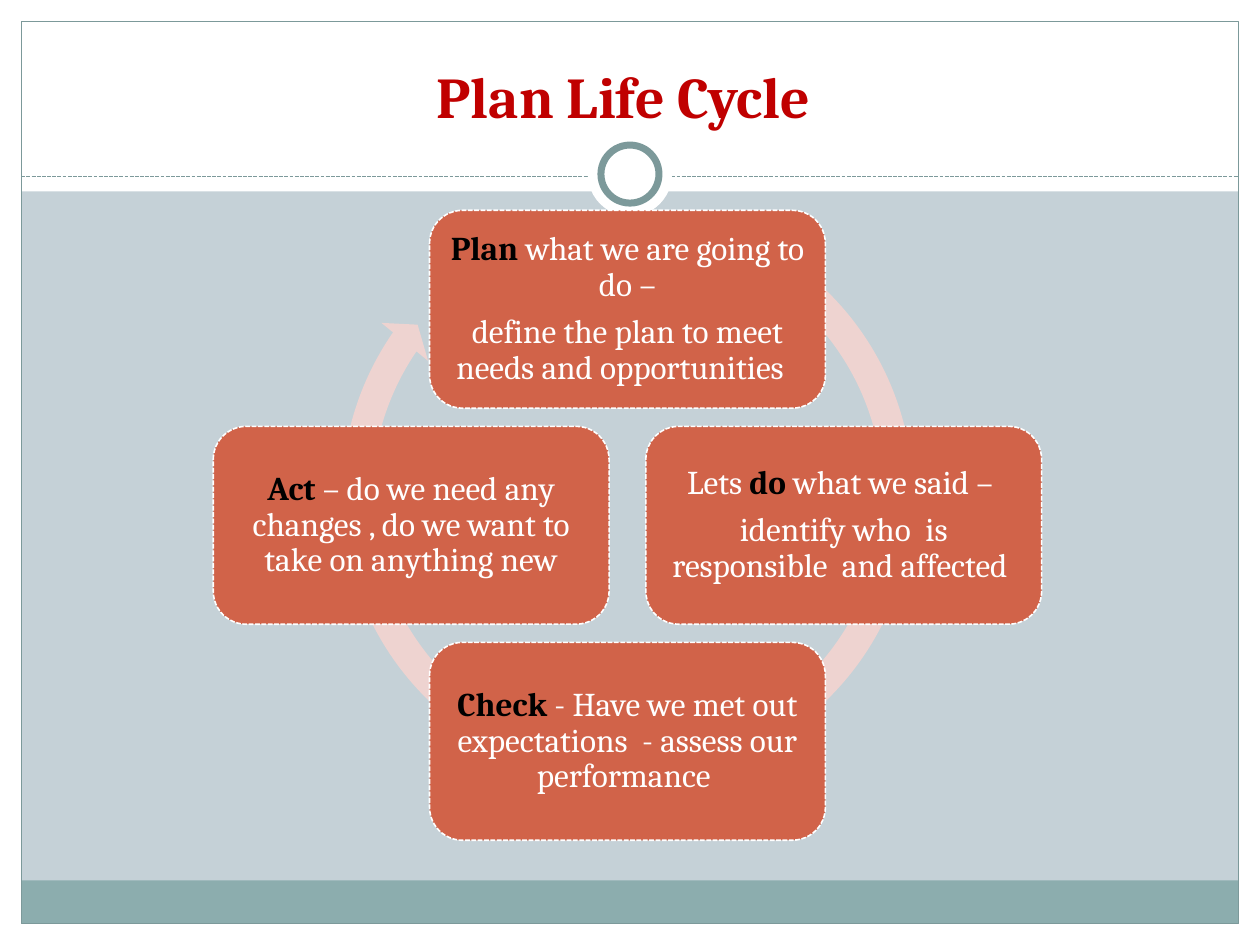
from dataclasses import dataclass

from lxml import etree
from pptx import Presentation
from pptx.dml.color import RGBColor
from pptx.enum.dml import MSO_LINE
from pptx.enum.shapes import MSO_CONNECTOR, MSO_SHAPE
from pptx.enum.text import MSO_ANCHOR, MSO_AUTO_SIZE, PP_ALIGN
from pptx.oxml.ns import qn
from pptx.util import Cm, Pt

RECT = MSO_SHAPE.RECTANGLE
ROUNDED = MSO_SHAPE.ROUNDED_RECTANGLE
OVAL = MSO_SHAPE.OVAL
CYCLE_ARROW = MSO_SHAPE.CIRCULAR_ARROW
STRAIGHT = MSO_CONNECTOR.STRAIGHT
DASH = MSO_LINE.SQUARE_DOT
CENTER = PP_ALIGN.CENTER
MIDDLE = MSO_ANCHOR.MIDDLE
BOTTOM = MSO_ANCHOR.BOTTOM
NO_FIT = MSO_AUTO_SIZE.NONE


@dataclass(frozen=True)
class Theme:
    font: str = "Cambria"
    title_size: float = 33
    card_size: float = 19
    backdrop: str = "C5D1D7"
    paper: str = "FFFFFF"
    band: str = "8CADAE"
    rule: str = "7C999A"
    title: str = "C00000"
    card: str = "D16349"
    arrow: str = "EED3D0"
    keyword: str = "000000"


THEME = Theme()
WIDTH, HEIGHT = 25.4, 19.05
MARGIN = 0.43
HEADER = 3.86

STEPS = [
    ((0, -1), [[("Plan", True), (" what we are going to do –", False)],
               [("define the plan to meet needs and opportunities  ", False)]]),
    ((1, 0), [[("Lets ", False), ("do", True), (" what we said – ", False)],
              [("identify who  is responsible  and affected ", False)]]),
    ((0, 1), [[("Check ", True),
               ("- Have we met out expectations  - assess our performance ", False)]]),
    ((-1, 0), [[("Act", True),
                (" – do we need any changes , do we want to take on anything new", False)]]),
]


def color(value):
    return RGBColor.from_string(value)


def style_line(line, value, width, dash=None):
    line.color.rgb = color(value)
    line.width = Pt(width)
    if dash:
        line.dash_style = dash


def add_block(slide, kind, box, fill=None, line=None):
    block = slide.shapes.add_shape(kind, *(Cm(length) for length in box))
    block.shadow.inherit = False
    if fill:
        block.fill.solid()
        block.fill.fore_color.rgb = color(fill)
    else:
        block.fill.background()
    if line:
        style_line(block.line, *line)
    else:
        block.line.fill.background()
    return block


def add_run(paragraph, text, size, value, bold):
    run = paragraph.add_run()
    run.text = text
    run.font.name = THEME.font
    run.font.size = Pt(size)
    run.font.bold = bold
    run.font.color.rgb = color(value)


def add_frame(slide, box):
    left, top, width, height = box
    inner_width, inner_height = width - 2 * MARGIN, height - 2 * MARGIN
    right, bottom = left + width - MARGIN, top + height - MARGIN
    margins = [
        (left, bottom, width, MARGIN),
        (left, top, width, HEADER),
        (left, top, MARGIN, height),
        (right, top, MARGIN, height),
    ]
    for margin in margins:
        add_block(slide, RECT, margin, THEME.paper)
    band_height = 0.87
    add_block(slide, RECT, (left + MARGIN, bottom - band_height, inner_width, band_height),
              THEME.band)
    add_block(slide, RECT, (left + MARGIN, top + MARGIN, inner_width, inner_height),
              line=(THEME.rule, 0.75))

    divider_y = Cm(top + 3.56)
    divider = slide.shapes.add_connector(STRAIGHT, Cm(left + MARGIN), divider_y,
                                         Cm(right), divider_y)
    style_line(divider.line, THEME.rule, 0.75, DASH)
    etree.SubElement(divider._element.spPr, qn("a:effectLst"))

    ring_x, ring_y = left + width / 2, top + 3.51
    for size, line in ((1.7, None), (1.17, (THEME.rule, 4))):
        add_block(slide, OVAL, (ring_x - size / 2, ring_y - size / 2, size, size),
                  THEME.paper, line)


def place_title(slide, box, text):
    title = slide.shapes.title
    slide.shapes._spTree.append(title._element)
    title.left, title.top, title.width, title.height = (Cm(length) for length in box)
    frame = title.text_frame
    frame.auto_size = NO_FIT
    frame.word_wrap = True
    frame.vertical_anchor = BOTTOM
    paragraph = frame.paragraphs[0]
    paragraph.alignment = CENTER
    add_run(paragraph, text, THEME.title_size, THEME.title, True)


def add_card(slide, box, paragraphs):
    card = add_block(slide, ROUNDED, box, THEME.card, (THEME.paper, 0.9, DASH))
    frame = card.text_frame
    frame.word_wrap = True
    frame.vertical_anchor = MIDDLE
    frame.margin_left = frame.margin_right = Cm(0.2)
    frame.margin_top = frame.margin_bottom = Cm(0.2)
    for index, runs in enumerate(paragraphs):
        paragraph = frame.add_paragraph() if index else frame.paragraphs[0]
        paragraph.alignment = CENTER
        paragraph.line_spacing = 0.9
        paragraph.space_after = Pt(6.65)
        for text, is_keyword in runs:
            add_run(paragraph, text, THEME.card_size,
                    THEME.keyword if is_keyword else THEME.paper, is_keyword)


def add_cycle(slide, box):
    left, top, width, height = box
    card_width, card_height = 7.98, 3.99
    center_x, center_y = left + width / 2, top + height / 2
    reach_x, reach_y = (width - card_width) / 2, (height - card_height) / 2

    loop_size, loop_rise = 12.12, 0.6
    loop = add_block(slide, CYCLE_ARROW,
                     (center_x - loop_size / 2, center_y - loop_rise - loop_size / 2,
                      loop_size, loop_size), THEME.arrow)
    for index, value in enumerate((0.05, 2.73, 128.76, 180, 0.05)):
        loop.adjustments[index] = value

    for (across, down), paragraphs in STEPS:
        add_card(slide, (center_x + across * reach_x - card_width / 2,
                         center_y + down * reach_y - card_height / 2,
                         card_width, card_height), paragraphs)


def main():
    deck = Presentation()
    deck.slide_width, deck.slide_height = Cm(WIDTH), Cm(HEIGHT)
    slide = deck.slides.add_slide(deck.slide_layouts[5])
    backdrop = slide.background.fill
    backdrop.solid()
    backdrop.fore_color.rgb = color(THEME.backdrop)
    add_frame(slide, (0, 0, WIDTH, HEIGHT))
    place_title(slide, (0.85, 0.64, 23.7, 2.11), "Plan Life Cycle ")
    add_cycle(slide, (4.3, 4.24, 16.7, 12.7))
    deck.save("out.pptx")


if __name__ == "__main__":
    main()
